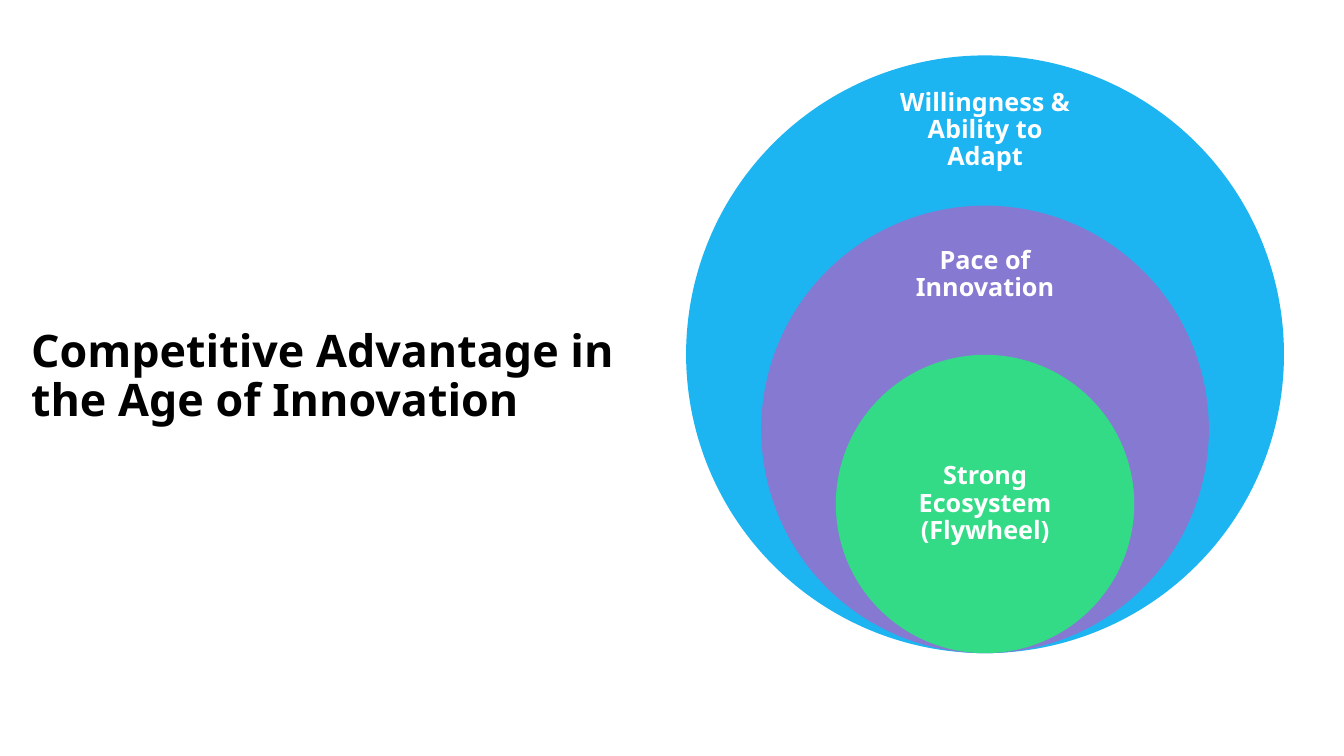
from dataclasses import dataclass

from pptx import Presentation
from pptx.dml.color import RGBColor
from pptx.enum.shapes import MSO_SHAPE
from pptx.enum.text import MSO_ANCHOR, PP_ALIGN
from pptx.slide import Slide
from pptx.util import Inches, Pt

OVAL = MSO_SHAPE.OVAL
MIDDLE = MSO_ANCHOR.MIDDLE
LEFT, CENTER = PP_ALIGN.LEFT, PP_ALIGN.CENTER

CIRCLES_CENTER = 9.77
CIRCLES_BOTTOM = 6.48


@dataclass(frozen=True)
class Theme:
    font: str = "Noto Sans"
    title_size: int = 32
    label_size: int = 18
    title_color: str = "000000"
    label_color: str = "FFFFFF"
    outer: str = "1CB5F2"
    middle: str = "8679D1"
    inner: str = "33DB87"


@dataclass(frozen=True)
class Label:
    text: str
    left: float
    top: float
    width: float
    height: float
    size: int
    color: str
    alignment: PP_ALIGN = CENTER
    side_inset: float = 0.14
    end_inset: float = 0.14


@dataclass(frozen=True)
class Ring:
    """A circle resting on the shared bottom point, with its label."""
    text: str
    diameter: float
    fill: str
    label_top: float
    label_width: float
    label_height: float


THEME = Theme()
TITLE = Label("Competitive Advantage in the Age of Innovation",
              0.21, 3.02, 6.69, 1.45, THEME.title_size, THEME.title_color,
              LEFT, 0.1, 0.05)
RINGS = (
    Ring("Willingness & Ability to Adapt", 5.93, THEME.outer, 0.85, 2.07, 0.89),
    Ring("Pace of Innovation", 4.44, THEME.middle, 2.31, 2.07, 0.83),
    Ring("Strong Ecosystem\v(Flywheel)", 2.96, THEME.inner, 4.26, 2.1, 1.48),
)


def add_label(slide: Slide, label: Label) -> None:
    shape = slide.shapes.add_textbox(
        Inches(label.left), Inches(label.top),
        Inches(label.width), Inches(label.height))
    frame = shape.text_frame
    frame.word_wrap = True
    frame.vertical_anchor = MIDDLE
    frame.margin_left = frame.margin_right = Inches(label.side_inset)
    frame.margin_top = frame.margin_bottom = Inches(label.end_inset)
    frame.text = label.text
    paragraph = frame.paragraphs[0]
    paragraph.alignment = label.alignment
    paragraph.line_spacing = 0.9
    paragraph.font.name = THEME.font
    paragraph.font.size = Pt(label.size)
    paragraph.font.bold = True
    paragraph.font.color.rgb = RGBColor.from_string(label.color)


def add_ring(slide: Slide, ring: Ring) -> None:
    shape = slide.shapes.add_shape(
        OVAL,
        Inches(CIRCLES_CENTER - ring.diameter / 2),
        Inches(CIRCLES_BOTTOM - ring.diameter),
        Inches(ring.diameter), Inches(ring.diameter))
    shape.shadow.inherit = False
    shape.fill.solid()
    shape.fill.fore_color.rgb = RGBColor.from_string(ring.fill)
    shape.line.fill.background()
    add_label(slide, Label(
        ring.text, CIRCLES_CENTER - ring.label_width / 2, ring.label_top,
        ring.label_width, ring.label_height,
        THEME.label_size, THEME.label_color))


def main() -> None:
    presentation = Presentation()
    presentation.slide_width = Inches(13.33)
    presentation.slide_height = Inches(7.5)
    slide = presentation.slides.add_slide(presentation.slide_layouts[6])
    add_label(slide, TITLE)
    for ring in RINGS:
        add_ring(slide, ring)
    presentation.save("out.pptx")


if __name__ == "__main__":
    main()
